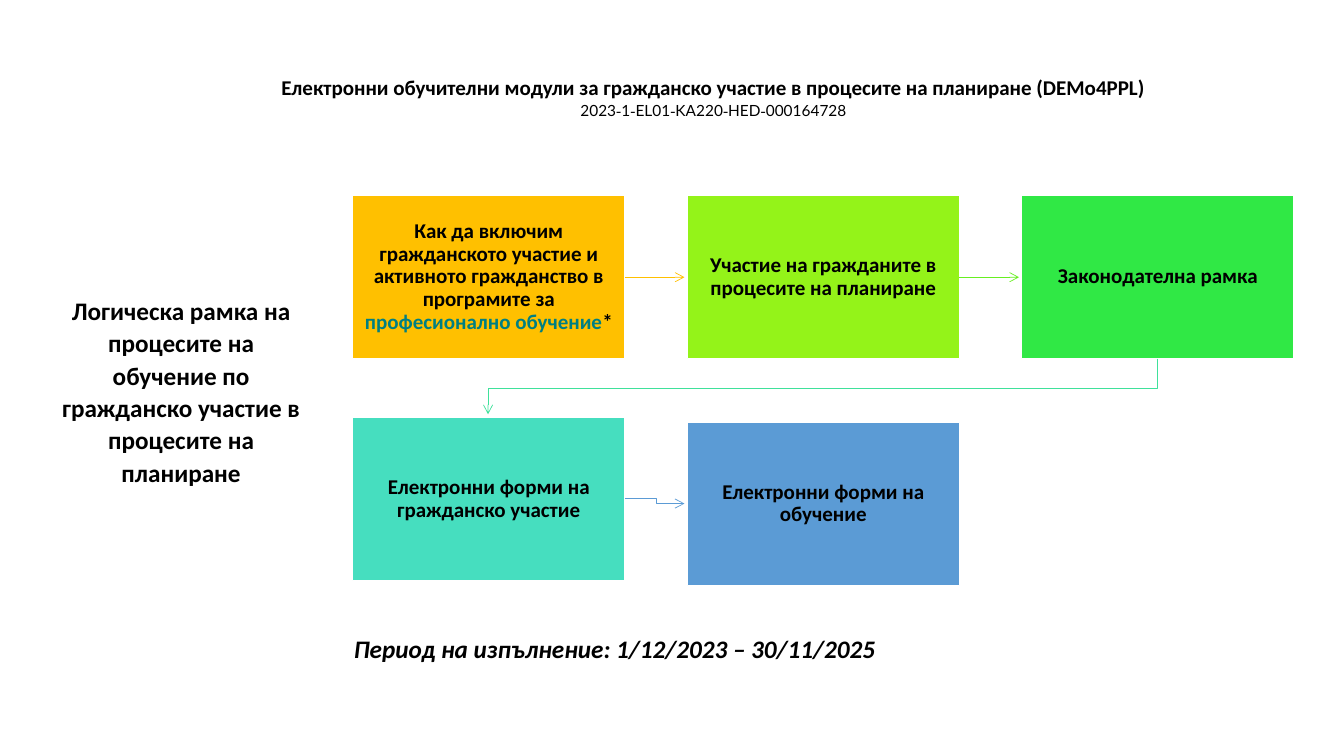
import pptx
import pptx.dml.color
import pptx.enum.shapes
import pptx.enum.text
import pptx.oxml
import pptx.oxml.ns
import pptx.util
from pptx.util import Cm


def color(value):
    return pptx.dml.color.RGBColor.from_string(value)


def style_arrow(arrow, line_color):
    arrow.line.color.rgb = color(line_color)
    arrow.line.width = pptx.util.Pt(0.5)
    namespace = pptx.oxml.ns.nsdecls("a")
    arrow.line._get_or_add_ln().append(
        pptx.oxml.parse_xml(f'<a:tailEnd {namespace} type="arrow"/>'))
    properties = arrow._element.spPr
    if properties.find(pptx.oxml.ns.qn("a:effectLst")) is None:
        properties.append(pptx.oxml.parse_xml(f"<a:effectLst {namespace}/>"))


presentation = pptx.Presentation()
presentation.slide_width = Cm(33.87)
presentation.slide_height = Cm(19.05)
slide = presentation.slides.add_slide(presentation.slide_layouts[6])
center = pptx.enum.text.PP_ALIGN.CENTER

header = slide.shapes.add_textbox(Cm(6.45), Cm(1.75), Cm(23.06), Cm(1.4))
header.text_frame.word_wrap = True
title = header.text_frame.paragraphs[0]
title.text = "Електронни обучителни модули за гражданско участие в процесите на планиране (DEMo4PPL)"
title.alignment = center
title.font.name = "Calibri"
title.font.size = pptx.util.Pt(15)
title.font.bold = True
title.font.color.rgb = color("000000")

project = header.text_frame.add_paragraph()
project.alignment = center
project.line_spacing = 1.07
project.font.size = pptx.util.Pt(11)
project.font.color.rgb = color("000000")
for index, part in enumerate("2023‐1‐EL01‐KA220‐HED‐000164728".split("‐")):
    if index:
        hyphen = project.add_run()
        hyphen.text = "‐"
        hyphen.font.name = "Times New Roman"
    run = project.add_run()
    run.text = part
    run.font.name = "Lato"

captions = [
    ("Логическа рамка на процесите на обучение по гражданско участие в процесите на планиране",
     1.3, 7.26, 6.53, 5.16, False),
    ("Период на изпълнение: 1/12/2023 – 30/11/2025", 8.23, 15.77, 14.53, 1.09, True),
]
for text, left, top, width, height, italic in captions:
    caption = slide.shapes.add_textbox(Cm(left), Cm(top), Cm(width), Cm(height))
    caption.text_frame.word_wrap = True
    paragraph = caption.text_frame.paragraphs[0]
    paragraph.text = text
    paragraph.alignment = center
    paragraph.line_spacing = 1.07
    paragraph.font.name = "Calibri"
    paragraph.font.size = pptx.util.Pt(18)
    paragraph.font.bold = True
    paragraph.font.italic = italic
    paragraph.font.color.rgb = color("000000")

first_left, column_step = 8.89, 8.43
box_width, box_height = 6.86, 4.11
modules = [
    (0, 4.93, "FFC000", [("Как да включим гражданското участие и активното гражданство в програмите за ", "000000"),
                         ("професионално обучение", "007F82"), ("*", "000000")]),
    (1, 4.93, "94F319", [("Участие на гражданите в процесите на планиране", "000000")]),
    (2, 4.93, "30E845", [("Законодателна рамка", "000000")]),
    (0, 10.52, "46DEBF", [("Електронни форми на гражданско участие", "000000")]),
    (1, 10.64, "5B9BD5", [("Електронни форми на обучение", "000000")]),
]
boxes = []
for column, top, fill, runs in modules:
    box = slide.shapes.add_shape(
        pptx.enum.shapes.MSO_SHAPE.RECTANGLE,
        Cm(first_left + column * column_step), Cm(top), Cm(box_width), Cm(box_height))
    box.shadow.inherit = False
    box.fill.solid()
    box.fill.fore_color.rgb = color(fill)
    box.line.color.rgb = color("FFFFFF")
    box.line.width = pptx.util.Pt(1)
    frame = box.text_frame
    frame.word_wrap = True
    frame.vertical_anchor = pptx.enum.text.MSO_ANCHOR.MIDDLE
    frame.margin_left = frame.margin_right = Cm(0.3)
    frame.margin_top = frame.margin_bottom = Cm(0.3)
    paragraph = frame.paragraphs[0]
    paragraph.alignment = center
    paragraph.line_spacing = 0.9
    paragraph.font.name = "Calibri"
    paragraph.font.size = pptx.util.Pt(15)
    paragraph.font.bold = True
    for text, text_color in runs:
        run = paragraph.add_run()
        run.text = text
        run.font.color.rgb = color(text_color)
    boxes.append(box)

for box, line_color in zip(boxes, ["FFC000", "67EF21"]):
    right = box.left + box.width
    middle = box.top + box.height // 2
    arrow = slide.shapes.add_connector(
        pptx.enum.shapes.MSO_CONNECTOR.STRAIGHT, right, middle, right + Cm(1.5), middle)
    arrow.begin_connect(box, 3)
    style_arrow(arrow, line_color)

bent_arrows = [
    ("3FE19B", [(29.18, 9.04), (29.18, 9.78), (12.3, 9.78), (12.3, 10.44)]),
    ("5B9BD5", [(15.75, 12.57), (16.53, 12.57), (16.53, 12.69), (17.25, 12.69)]),
]
for line_color, points in bent_arrows:
    corners = [(Cm(x), Cm(y)) for x, y in points]
    builder = slide.shapes.build_freeform(*corners[0])
    builder.add_line_segments(corners[1:], close=False)
    arrow = builder.convert_to_shape()
    arrow.shadow.inherit = False
    arrow.fill.background()
    style_arrow(arrow, line_color)

presentation.save("out.pptx")
